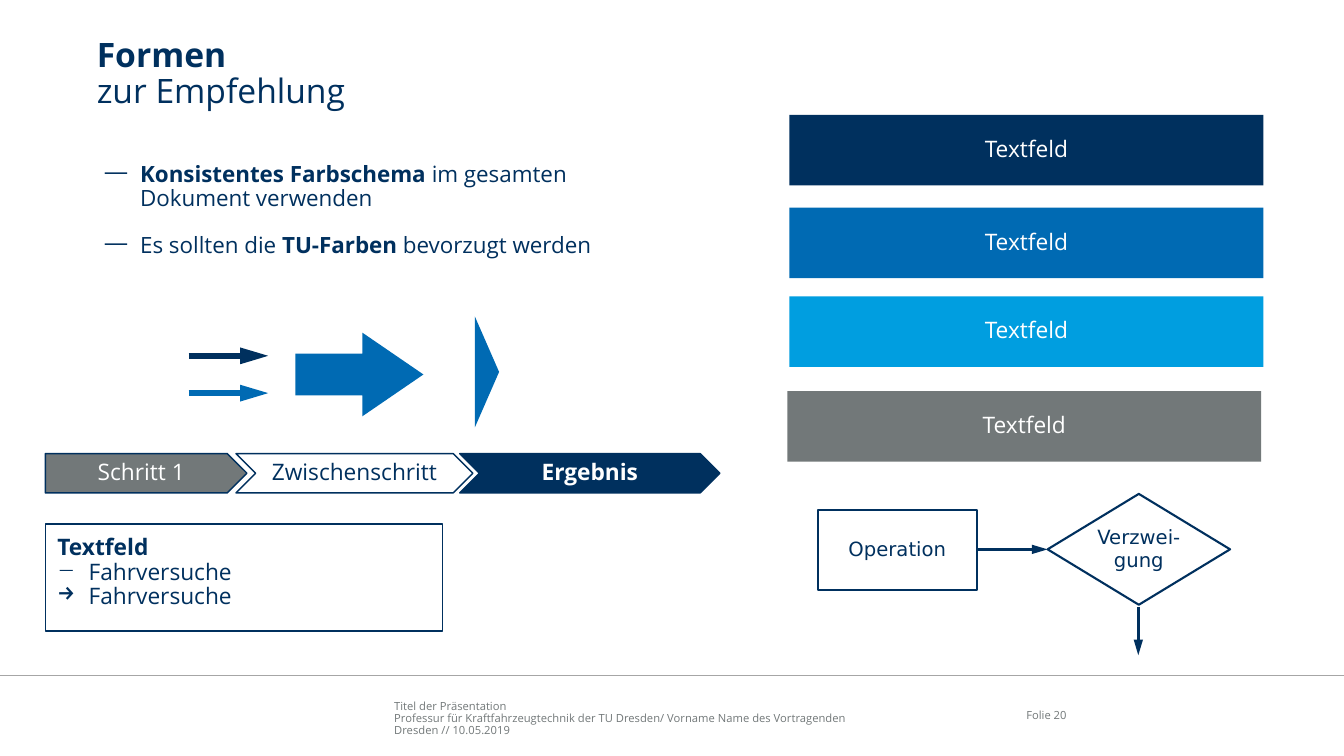
from dataclasses import dataclass, field
from typing import Any

from lxml import etree
from pptx import Presentation
from pptx.dml.color import RGBColor
from pptx.enum.shapes import MSO_CONNECTOR, MSO_SHAPE
from pptx.enum.text import MSO_ANCHOR, PP_ALIGN
from pptx.oxml.ns import qn
from pptx.util import Inches, Pt

RECT, DIAMOND, TRIANGLE = MSO_SHAPE.RECTANGLE, MSO_SHAPE.DIAMOND, MSO_SHAPE.ISOSCELES_TRIANGLE
PENTAGON, CHEVRON, DOWN_ARROW = MSO_SHAPE.PENTAGON, MSO_SHAPE.CHEVRON, MSO_SHAPE.DOWN_ARROW
STRAIGHT = MSO_CONNECTOR.STRAIGHT
LEFT, CENTER, RIGHT = PP_ALIGN.LEFT, PP_ALIGN.CENTER, PP_ALIGN.RIGHT
TOP, MIDDLE, BOTTOM = MSO_ANCHOR.TOP, MSO_ANCHOR.MIDDLE, MSO_ANCHOR.BOTTOM

COLORS = {
    "navy": "00305E", "blue": "006AB3", "cyan": "009EE0",
    "gray": "727879", "rule": "A6A6A6", "white": "FFFFFF",
}
MARGIN_SIDES = ("margin_left", "margin_top", "margin_right", "margin_bottom")
DEFAULT_INSETS = (0.1, 0.05, 0.1, 0.05)
NO_INSETS = (0, 0, 0, 0)

Box = tuple[float, float, float, float]
Point = tuple[float, float]


@dataclass
class TextStyle:
    size: float = 16.2
    color: str = "navy"
    font: str = "Open Sans"
    align: Any = LEFT
    anchor: Any = TOP
    insets: Box = NO_INSETS
    line_spacing: float = 0.9


@dataclass
class Line:
    """One paragraph: runs are (text, bold) pairs, a bullet hangs in its indent."""
    runs: list[tuple[str, bool]]
    bullet: str = ""
    indent: float = 0
    hanging: float = 0
    space_before: float = 0


@dataclass
class Figure:
    kind: Any
    box: Box
    fill: str = ""
    outline: str = ""
    outline_width: float = 1
    rotation: float = 0
    adjustments: tuple[float, ...] = ()
    lines: list[Line] = field(default_factory=list)
    style: TextStyle = field(default_factory=TextStyle)


@dataclass
class Connection:
    start: Point
    end: Point
    color: str
    width: float
    arrow: bool = True


def rgb(name: str) -> RGBColor:
    return RGBColor.from_string(COLORS[name])


def apply(target: Any, values: dict[str, Any]) -> None:
    for name, value in values.items():
        setattr(target, name, value)


def plain(*texts: str, bold: bool = False) -> list[Line]:
    return [Line([(text, bold)]) for text in texts]


def add_bullet(paragraph: Any, line: Line) -> None:
    properties = paragraph._p.get_or_add_pPr()
    properties.set("marL", str(Inches(line.indent)))
    properties.set("indent", str(-Inches(line.hanging)))
    etree.SubElement(properties, qn("a:buChar")).set("char", line.bullet)


def write(frame: Any, lines: list[Line], style: TextStyle) -> None:
    apply(frame, {"word_wrap": True, "vertical_anchor": style.anchor})
    apply(frame, {side: Inches(inset) for side, inset in zip(MARGIN_SIDES, style.insets)})
    for number, line in enumerate(lines):
        paragraph = frame.add_paragraph() if number else frame.paragraphs[0]
        if line.bullet:
            add_bullet(paragraph, line)
        apply(paragraph, {"alignment": style.align, "line_spacing": style.line_spacing,
                          "space_before": Pt(line.space_before)})
        for text, bold in line.runs:
            if text == "\n":
                paragraph.add_line_break()
                continue
            run = paragraph.add_run()
            run.text = text
            apply(run.font, {"name": style.font, "size": Pt(style.size), "bold": bold})
            run.font.color.rgb = rgb(style.color)


def add_text(slide: Any, box: Box, lines: list[Line], style: TextStyle) -> None:
    write(slide.shapes.add_textbox(*map(Inches, box)).text_frame, lines, style)


def add_figure(slide: Any, figure: Figure) -> None:
    shape = slide.shapes.add_shape(figure.kind, *map(Inches, figure.box))
    shape.shadow.inherit = False
    shape.rotation = figure.rotation
    for number, value in enumerate(figure.adjustments):
        shape.adjustments[number] = value
    if figure.fill:
        shape.fill.solid()
        shape.fill.fore_color.rgb = rgb(figure.fill)
    else:
        shape.fill.background()
    if figure.outline:
        shape.line.color.rgb = rgb(figure.outline)
        shape.line.width = Pt(figure.outline_width)
    else:
        shape.line.fill.background()
    if figure.lines:
        write(shape.text_frame, figure.lines, figure.style)


def add_connection(slide: Any, link: Connection) -> None:
    connector = slide.shapes.add_connector(STRAIGHT, *map(Inches, link.start + link.end))
    connector.line.color.rgb = rgb(link.color)
    connector.line.width = Pt(link.width)
    if link.arrow:
        tail = etree.SubElement(connector.line._get_or_add_ln(), qn("a:tailEnd"))
        for name, value in {"type": "triangle", "w": "med", "len": "lg"}.items():
            tail.set(name, value)
    etree.SubElement(connector._element.spPr, qn("a:effectLst"))


def label(color: str, **changes: Any) -> TextStyle:
    """Centred text style for the inside of a figure."""
    values = {"align": CENTER, "anchor": MIDDLE, "insets": DEFAULT_INSETS} | changes
    return TextStyle(color=color, **values)


ON_DARK, ON_LIGHT = label("white"), label("navy")
FLOW_STYLE = {"size": 14, "font": "DejaVu Sans", "line_spacing": 0.95}

COLOR_BARS = [
    Figure(RECT, (left, top, 4.7, 0.7), fill, lines=plain("Textfeld"), style=ON_DARK)
    for left, top, fill in [(7.83, 1.14, "navy"), (7.83, 2.06, "blue"),
                            (7.83, 2.94, "cyan"), (7.81, 3.88, "gray")]
]
ARROW_SHAPES = [
    Figure(TRIANGLE, (4.28, 3.57, 1.1, 0.24), "blue", rotation=90),
    Figure(DOWN_ARROW, (3.15, 3.08, 0.83, 1.27), "blue", rotation=270, adjustments=(0.5, 0.73)),
]
FLOWCHART = [
    Figure(DIAMOND, (10.39, 4.9, 1.81, 1.1), "white", "navy", 1.5, lines=plain("Verzwei-gung"),
           style=label("navy", insets=(0, 0.05, 0, 0.05), **FLOW_STYLE)),
    Figure(RECT, (8.11, 5.06, 1.58, 0.79), "white", "navy", 1.5, lines=plain("Operation"),
           style=label("navy", **FLOW_STYLE)),
]
STEPS = [
    Figure(PENTAGON, (0.45, 4.5, 2, 0.39), "gray", "navy",
           lines=plain("Schritt 1"), style=ON_DARK),
    Figure(CHEVRON, (2.34, 4.5, 2.35, 0.39), "", "navy",
           lines=plain("Zwischenschritt"), style=ON_LIGHT),
    Figure(CHEVRON, (4.56, 4.5, 2.58, 0.39), "navy", "navy",
           lines=plain("Ergebnis", bold=True), style=ON_DARK),
]
TEST_DRIVES = Figure(
    RECT, (0.45, 5.2, 3.94, 1.06), "", "navy", style=TextStyle(insets=(0.12,) * 4),
    lines=plain("Textfeld", bold=True)
    + [Line([("Fahrversuche", False)], bullet, 0.31, 0.31) for bullet in "−→"])
CONNECTIONS = [
    Connection((0, 6.7), (13.33, 6.7), "rule", 1, arrow=False),
    Connection((1.87, 3.9), (2.66, 3.9), "blue", 4),
    Connection((1.87, 3.53), (2.66, 3.53), "navy", 4),
    Connection((9.68, 5.45), (10.39, 5.45), "navy", 2.25),
    Connection((11.29, 6.02), (11.29, 6.5), "navy", 2.25),
]
ADVICE = [
    Line([("Konsistentes Farbschema ", True), ("im gesamten Dokument verwenden", False)],
         "—", 0.43, 0.35),
    Line([("Es sollten die ", False), ("TU-Farben", True), (" bevorzugt werden", False)],
         "—", 0.43, 0.35, space_before=16),
]
FOOTER = plain("Titel der Präsentation",
               "Professur für Kraftfahrzeugtechnik der TU Dresden/ Vorname Name des Vortragenden",
               "Dresden // 10.05.2019")


def main() -> None:
    deck = Presentation()
    apply(deck, {"slide_width": Inches(13.33), "slide_height": Inches(7.5)})
    slide = deck.slides.add_slide(deck.slide_layouts[5])
    title = slide.shapes.title
    apply(title, dict(zip(("left", "top", "width", "height"), map(Inches, (0.96, 0.38, 11.57, 0.75)))))
    write(title.text_frame, [Line([("Formen", True), ("\n", False), ("zur Empfehlung", False)])],
          TextStyle(size=24))
    add_text(slide, (0.96, 1.62, 5.68, 2.99), ADVICE, TextStyle(size=16))
    add_text(slide, (3.91, 6.91, 5.67, 0.4), FOOTER, TextStyle(8, "gray", anchor=BOTTOM))
    add_text(slide, (9.81, 6.9, 0.77, 0.4), plain("Folie 20"),
             TextStyle(8, "gray", align=RIGHT, anchor=MIDDLE))
    for link in CONNECTIONS:
        add_connection(slide, link)
    for figure in [*COLOR_BARS, *ARROW_SHAPES, *FLOWCHART, *STEPS, TEST_DRIVES]:
        add_figure(slide, figure)
    deck.save("out.pptx")


if __name__ == "__main__":
    main()
